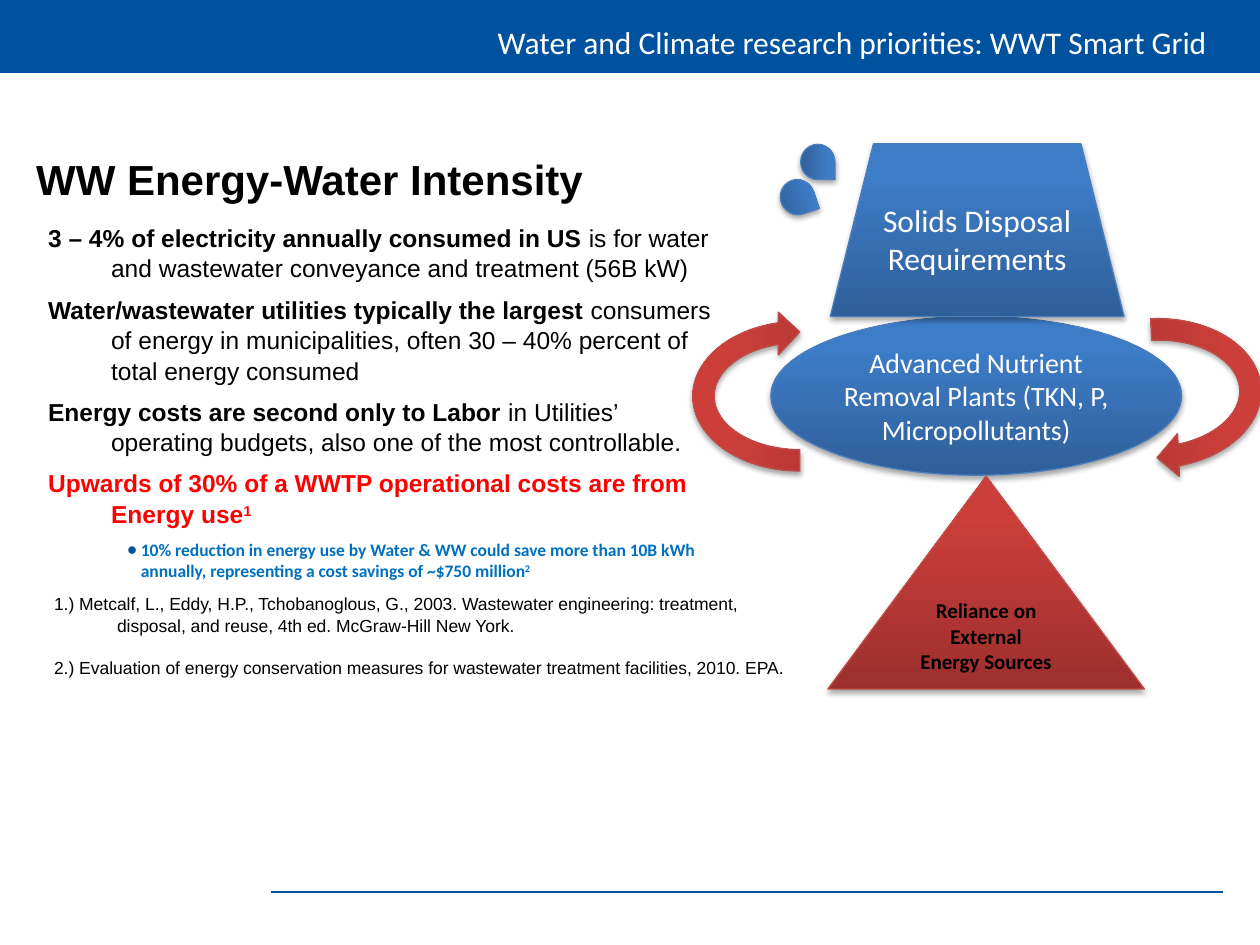
import pptx
import pptx.dml.color
import pptx.enum.shapes
import pptx.enum.text
import pptx.oxml
import pptx.util
from pptx.util import Cm

SHAPES = pptx.enum.shapes.MSO_SHAPE
ALIGN = pptx.enum.text.PP_ALIGN
ANCHOR = pptx.enum.text.MSO_ANCHOR
NAMESPACE = 'xmlns:a="http://schemas.openxmlformats.org/drawingml/2006/main"'
BRAND = "00519E"
BLUE = ("2F5F99", "3D7CC7", "4B7EBC")
RED = ("9C2F2D", "CB3E3A", "BF4C48")
SHADOW = (f'<a:outerShdw {NAMESPACE} blurRad="40000" dist="23000" dir="5400000" rotWithShape="0">'
          '<a:srgbClr val="000000"><a:alpha val="35000"/></a:srgbClr></a:outerShdw>')

FACTS = [
    ("3 – 4% of electricity annually consumed in US",
     " is for water and wastewater conveyance and treatment (56B kW)"),
    ("Water/wastewater utilities typically the largest",
     " consumers of energy in municipalities, often 30 – 40% percent of total energy consumed"),
    ("Energy costs are second only to Labor",
     " in Utilities’ operating budgets, also one of the most controllable."),
]
KEY_FACT = "Upwards of 30% of a WWTP operational costs are from Energy use"
SAVING = ("10% reduction in energy use by Water & WW could save more than 10B kWh annually, "
          "representing a cost savings of ~$750 million")
REFERENCES = [
    "1.) Metcalf, L., Eddy, H.P., Tchobanoglous, G., 2003. Wastewater engineering: treatment, "
    "disposal, and reuse, 4th ed. McGraw-Hill New York.",
    "2.) Evaluation of energy conservation measures for wastewater treatment facilities, 2010. EPA.",
]


def color(value):
    return pptx.dml.color.RGBColor.from_string(value)


class SlideBuilder:
    """Holds the style and the current slide, with one method per kind of element."""

    def __init__(self, presentation):
        self.slide = presentation.slides.add_slide(presentation.slide_layouts[1])
        self.shapes = self.slide.shapes

    def place(self, shape, left, top, width, height):
        shape.left, shape.top = Cm(left), Cm(top)
        shape.width, shape.height = Cm(width), Cm(height)

    def style(self, run, size, fill="000000", bold=False, name="Arial"):
        run.font.size = pptx.util.Pt(size)
        run.font.name = name
        run.font.bold = bold
        run.font.color.rgb = color(fill)

    def run(self, paragraph, text, superscript=False, **style):
        run = paragraph.add_run()
        run.text = text
        self.style(run, **style)
        if superscript:
            run.font._element.set("baseline", "30000")

    def indent(self, paragraph, margin, first, bullet=None):
        properties = paragraph._p.get_or_add_pPr()
        properties.set("marL", str(Cm(margin)))
        properties.set("indent", str(Cm(first)))
        tags = ["<a:buNone {}/>"]
        if bullet:
            tags = [f'<a:buClr {{}}><a:srgbClr val="{BRAND}"/></a:buClr>',
                    '<a:buFont {} typeface="Arial"/>', f'<a:buChar {{}} char="{bullet}"/>']
        for tag in tags:
            properties.append(pptx.oxml.parse_xml(tag.format(NAMESPACE)))

    def spacing(self, paragraph, line=1.0, before=0, after=0):
        paragraph.line_spacing = line
        paragraph.space_before = pptx.util.Pt(before)
        paragraph.space_after = pptx.util.Pt(after)

    def band(self, height):
        band = self.shapes.add_shape(SHAPES.RECTANGLE, 0, 0, Cm(25.4), Cm(height))
        band.shadow.inherit = False
        band.fill.solid()
        band.fill.fore_color.rgb = color(BRAND)
        band.line.fill.background()

    def rule(self, left, right, top):
        line = self.shapes.add_connector(pptx.enum.shapes.MSO_CONNECTOR.STRAIGHT,
                                         Cm(left), Cm(top), Cm(right), Cm(top))
        line.line.color.rgb = color(BRAND)
        line.line.width = pptx.util.Pt(0.75)
        line._element.spPr.append(pptx.oxml.parse_xml(f"<a:effectLst {NAMESPACE}/>"))

    def title(self, text, *box):
        title = self.shapes.title
        self.shapes._spTree.append(title._element)
        self.place(title, *box)
        frame = title.text_frame
        frame.text = text
        frame.auto_size = pptx.enum.text.MSO_AUTO_SIZE.NONE
        frame.vertical_anchor = ANCHOR.TOP
        frame.paragraphs[0].alignment = ALIGN.LEFT
        self.style(frame.paragraphs[0].runs[0], 18, "FFFFFF", name="Calibri")

    def body(self, *box):
        body = self.slide.placeholders[1]
        self.place(body, *box)
        frame = body.text_frame
        frame.auto_size = pptx.enum.text.MSO_AUTO_SIZE.NONE
        frame.margin_left = frame.margin_right = frame.margin_top = frame.margin_bottom = 0
        paragraph = frame.paragraphs[0]
        for lead, rest in FACTS:
            self.run(paragraph, lead, size=14, bold=True)
            self.run(paragraph, rest, size=14)
            paragraph = frame.add_paragraph()
        for superscript, text in enumerate((KEY_FACT, "1")):
            self.run(paragraph, text, superscript, size=14, fill="FF0000", bold=True)
        for paragraph in frame.paragraphs:
            self.indent(paragraph, 1.3, -1.27)
            self.spacing(paragraph, 1.04, after=6)
        saving = frame.add_paragraph()
        saving.level = 1
        self.indent(saving, 1.9, -0.28, "●")
        self.spacing(saving, after=6)
        for superscript, text in enumerate((SAVING, "2")):
            self.run(saving, text, superscript, size=10, fill="0070C0", bold=True, name="Calibri")

    def heading(self, text, *box):
        frame = self.shapes.add_textbox(*map(Cm, box)).text_frame
        frame.word_wrap = False
        frame.text = text
        self.style(frame.paragraphs[0].runs[0], 24, bold=True)

    def references(self, *box):
        frame = self.shapes.add_textbox(*map(Cm, box)).text_frame
        frame.word_wrap = True
        frame.text = "\n".join(REFERENCES)
        for index, paragraph in enumerate(frame.paragraphs):
            self.indent(paragraph, 1.3, -1.27)
            self.spacing(paragraph, 1.04, before=12 * index)
            self.style(paragraph.runs[0], 10)

    def diagram_shape(self, kind, palette, box, rotation=0, text=None, **style):
        shape = self.shapes.add_shape(kind, *map(Cm, box))
        shape.rotation = rotation
        shape.fill.gradient()
        shape.fill.gradient_angle = 90
        for stop, position, value in zip(shape.fill.gradient_stops, (0, 0.8), palette):
            stop.position = position
            stop.color.rgb = color(value)
        shape.line.color.rgb = color(palette[2])
        shape.line.width = pptx.util.Pt(0.75)
        shape.shadow.inherit = False
        shape._element.spPr[-1].append(pptx.oxml.parse_xml(SHADOW))
        if text:
            frame = shape.text_frame
            frame.word_wrap = True
            frame.vertical_anchor = ANCHOR.MIDDLE
            frame.text = text
            frame.paragraphs[0].alignment = ALIGN.CENTER
            self.style(frame.paragraphs[0].runs[0], name="Calibri", **style)


def main():
    presentation = pptx.Presentation()
    presentation.slide_width, presentation.slide_height = Cm(25.4), Cm(19.05)
    builder = SlideBuilder(presentation)
    builder.band(1.47)
    builder.rule(5.46, 24.66, 17.98)
    builder.body(0.94, 4.47, 13.44, 7.9)
    builder.heading("WW Energy-Water Intensity", 0.48, 2.97, 11.63, 1.27)
    builder.diagram_shape(SHAPES.OVAL, BLUE, (15.54, 6.38, 8.28, 3.2), size=16, fill="FFFFFF",
                          text="Advanced Nutrient Removal Plants (TKN, P, Micropollutants)")
    builder.diagram_shape(SHAPES.TRAPEZOID, BLUE, (16.74, 2.9, 5.92, 3.48), size=18, fill="FFFFFF",
                          text="Solids Disposal Requirements")
    builder.diagram_shape(SHAPES.ISOSCELES_TRIANGLE, RED, (16.69, 9.6, 6.38, 4.29), size=12,
                          bold=True, text="Reliance on External Energy Sources")
    for left, top, rotation in ((14.4, 5.61, 270), (21.54, 5.56, 87.4)):
        builder.diagram_shape(SHAPES.CIRCULAR_ARROW, RED, (left, top, 3.45, 4.75), rotation)
    for left, top, rotation in ((16.13, 2.92, 90), (15.72, 3.63, 71.5)):
        builder.diagram_shape(SHAPES.TEAR, BLUE, (left, top, 0.71, 0.69), rotation)
    builder.references(0.81, 11.81, 15.7, 1.96)
    builder.title("Water and Climate research priorities: WWT Smart Grid", 9.78, 0.33, 15.6, 1.02)
    presentation.save("out.pptx")


if __name__ == "__main__":
    main()
